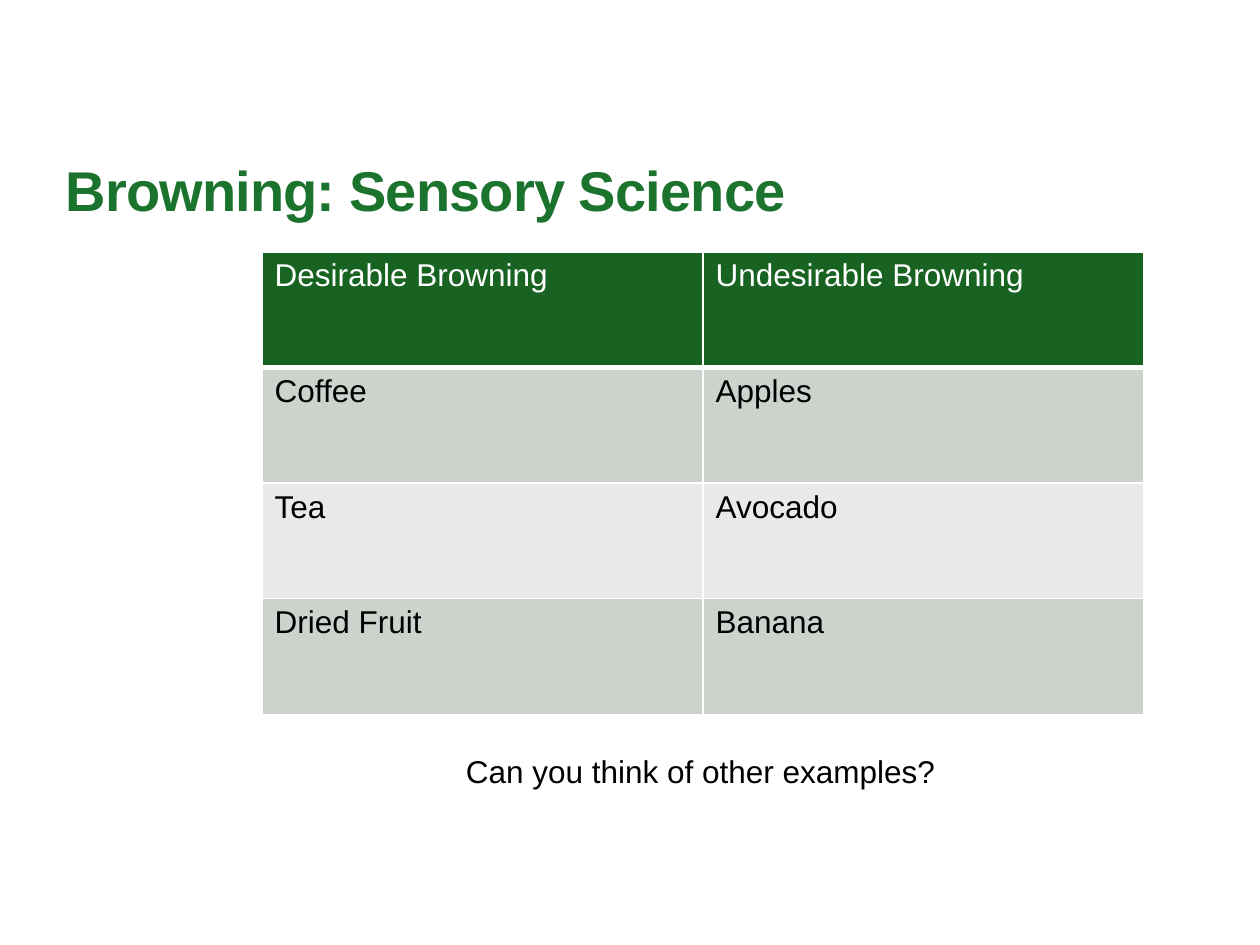
import pptx
import pptx.dml.color
import pptx.enum.text
import pptx.oxml
import pptx.oxml.ns
import pptx.util
from pptx.util import Inches

COLORS = {
    "title": "1B732D",
    "header": "196322",
    "band_dark": "CCD3CD",
    "band_light": "E8EAE8",
    "white": "FFFFFF",
    "black": "000000",
}

ROWS = [
    ("Desirable Browning", "Undesirable Browning"),
    ("Coffee", "Apples"),
    ("Tea", "Avocado"),
    ("Dried Fruit", "Banana"),
]


class SlideBuilder:
    font = "Arial"
    body_size = 18

    def __init__(self, prs):
        self.s = prs.slides.add_slide(prs.slide_layouts[5])

    def rgb(self, name):
        return pptx.dml.color.RGBColor.from_string(COLORS[name])

    def set_text(self, tf, text, color, size=body_size, bold=False):
        tf.text = text
        p = tf.paragraphs[0]
        p.alignment = pptx.enum.text.PP_ALIGN.LEFT
        r = p.runs[0]
        r.font.name = self.font
        r.font.size = pptx.util.Pt(size)
        r.font.bold = bold
        r.font.color.rgb = self.rgb(color)
        return r

    def title(self, text, left, top, width, height):
        sp = self.s.shapes.title
        sp.left, sp.top = Inches(left), Inches(top)
        sp.width, sp.height = Inches(width), Inches(height)
        tf = sp.text_frame
        tf.vertical_anchor = pptx.enum.text.MSO_ANCHOR.MIDDLE
        r = self.set_text(tf, text, "title", 32, True)
        r._r.get_or_add_rPr().set("spc", "-50")

    def borders(self, cell, bottom):
        tc_pr = cell._tc.get_or_add_tcPr()
        widths = {"lnL": 1, "lnR": 1, "lnT": 1, "lnB": bottom}
        # Border lines come before the fill in the cell properties
        for i, (side, width) in enumerate(widths.items()):
            tc_pr.insert(i, pptx.oxml.parse_xml(
                f'<a:{side} {pptx.oxml.ns.nsdecls("a")} w="{pptx.util.Pt(width)}">'
                f'<a:solidFill><a:srgbClr val="{COLORS["white"]}"/></a:solidFill>'
                f'</a:{side}>'))

    def table(self, rows, left, top, width, height):
        table = self.s.shapes.add_table(
            len(rows), len(rows[0]), Inches(left), Inches(top),
            Inches(width), Inches(height)).table
        for i, row in enumerate(rows):
            if i == 0:
                fill, color, bottom = "header", "white", 3
            else:
                fill, color, bottom = ("band_dark" if i % 2 else "band_light"), "black", 1
            for j, text in enumerate(row):
                cell = table.cell(i, j)
                self.set_text(cell.text_frame, text, color)
                cell.fill.solid()
                cell.fill.fore_color.rgb = self.rgb(fill)
                self.borders(cell, bottom)

    def label(self, text, left, top, width, height):
        sp = self.s.shapes.add_textbox(
            Inches(left), Inches(top), Inches(width), Inches(height))
        tf = sp.text_frame
        tf.word_wrap = False
        tf.auto_size = pptx.enum.text.MSO_AUTO_SIZE.SHAPE_TO_FIT_TEXT
        self.set_text(tf, text, "black")


def main():
    prs = pptx.Presentation()
    prs.slide_width, prs.slide_height = Inches(10), Inches(7.5)
    slide = SlideBuilder(prs)

    # Heading
    slide.title("Browning: Sensory Science", 0.42, 1, 9, 1)

    # Comparison table
    slide.table(ROWS, 2.08, 2, 7, 3.67)

    # Closing question
    slide.label("Can you think of other examples?", 3.6, 5.92, 3.96, 0.4)

    prs.save("out.pptx")


if __name__ == "__main__":
    main()
